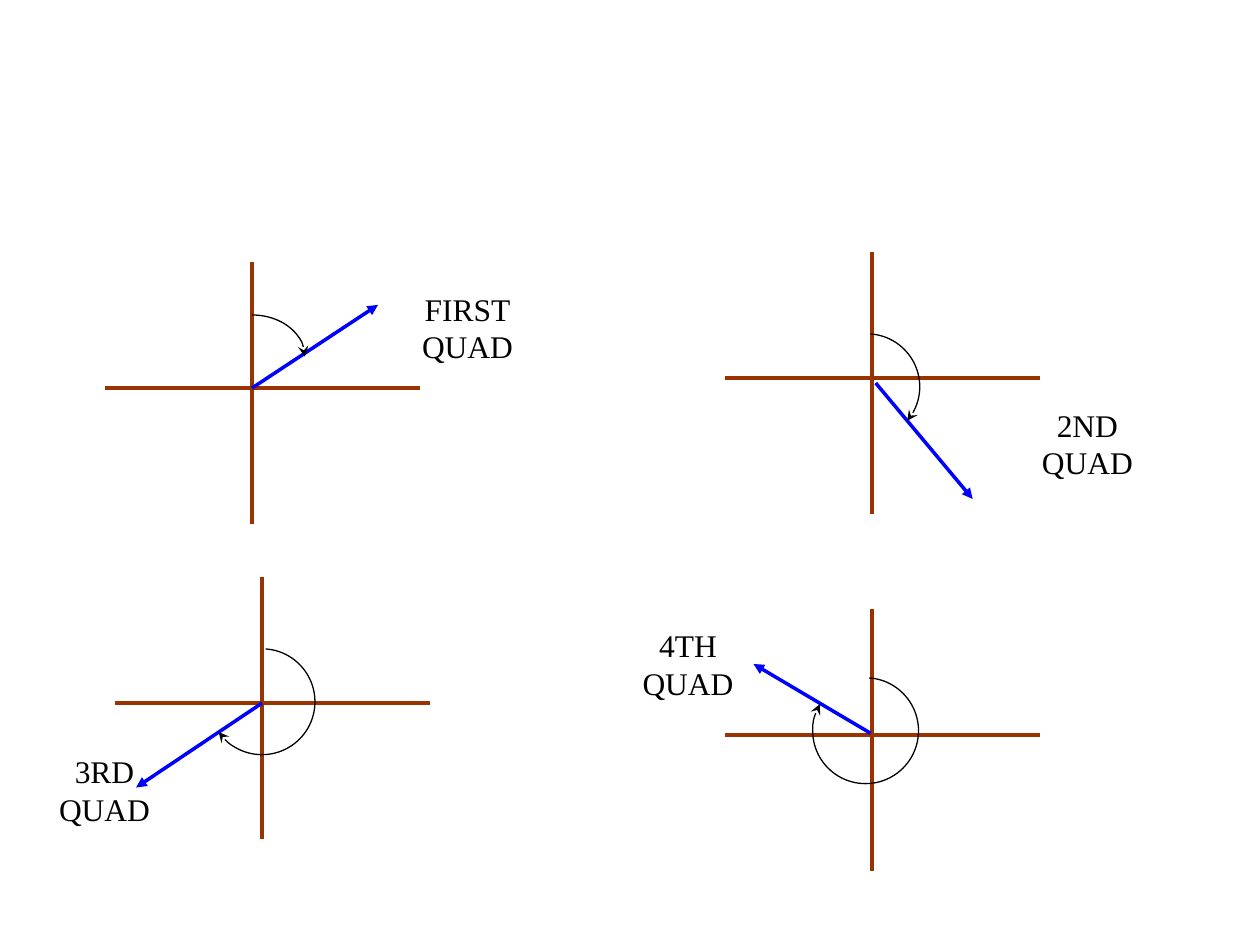
from pptx import Presentation
from pptx.dml.color import RGBColor
from pptx.enum import shapes as kinds, text as txt
from pptx.oxml import parse_xml
from pptx.oxml.ns import nsdecls
from pptx.util import Inches, Pt

BROWN = RGBColor(0x99, 0x33, 0x00)
BLUE = RGBColor(0x00, 0x00, 0xFF)
BLACK = RGBColor(0x00, 0x00, 0x00)

# origin, vector start, vector tip,
# arc (centre x, centre y, x radius, y radius, start and end degrees),
# label (rank, left, top, width, wrap)
QUADS = [
    ((2, 3.08), (2, 3.08), (3, 2.42),
     (2, 2.83, 0.42, 0.33, 270, 0), ("FIRST", 3.25, 2.25, 0.92, False)),
    ((6.92, 3), (6.95, 3.04), (7.72, 3.96),
     (6.88, 3.07, 0.42, 0.42, 274, 40), ("2ND", 8.17, 3.17, 0.92, False)),
    ((2.08, 5.58), (2.08, 5.58), (1.08, 6.25),
     (2.08, 5.57, 0.42, 0.42, 274, 145), ("3RD", 0.33, 5.92, 1, True)),
    ((6.92, 5.83), (6.91, 5.82), (5.98, 5.27),
     (6.87, 5.8, 0.42, 0.42, 274, 210), ("4TH", 5, 4.92, 0.92, False)),
]
LEFT, RIGHT, UP, DOWN = 1.17, 1.33, 1, 1.08  # axis reach from the origin

deck = Presentation()
deck.slide_width, deck.slide_height = Inches(10), Inches(7.5)
slide = deck.slides.add_slide(deck.slide_layouts[6])


def add_tip(line, kind):
    """Put an arrowhead at the end of a line."""
    line._get_or_add_ln().append(
        parse_xml(f'<a:tailEnd {nsdecls("a")} type="{kind}"/>'))


def add_line(start, end, color, width):
    ends = [Inches(v) for v in (*start, *end)]
    rod = slide.shapes.add_connector(kinds.MSO_CONNECTOR.STRAIGHT, *ends)
    rod.line.color.rgb = color
    rod.line.width = Pt(width)
    rod._element.spPr.append(parse_xml(f'<a:effectLst {nsdecls("a")}/>'))
    return rod


for (x, y), start, tip, curve, label in QUADS:
    add_line((x - LEFT, y), (x + RIGHT, y), BROWN, 2.25)
    add_line((x, y - UP), (x, y + DOWN), BROWN, 2.25)
    add_tip(add_line(start, tip, BLUE, 2).line, "triangle")

    cx, cy, rx, ry, first, last = curve
    arc = slide.shapes.add_shape(
        kinds.MSO_SHAPE.ARC, Inches(cx - rx), Inches(cy - ry),
        Inches(2 * rx), Inches(2 * ry))
    # Angles are stored in 60000ths of a degree, adjustments in 100000ths
    arc.adjustments[0] = first * 0.6
    arc.adjustments[1] = last * 0.6
    arc.shadow.inherit = False
    arc.fill.background()
    arc.line.color.rgb = BLACK
    arc.line.width = Pt(0.75)
    add_tip(arc.line, "stealth")

    rank, left, top, width, wrap = label
    box = slide.shapes.add_textbox(
        Inches(left), Inches(top), Inches(width), Inches(0.7))
    frame = box.text_frame
    frame.word_wrap = wrap
    frame.auto_size = txt.MSO_AUTO_SIZE.SHAPE_TO_FIT_TEXT
    for i, word in enumerate((rank, "QUAD")):
        para = frame.add_paragraph() if i else frame.paragraphs[0]
        para.alignment = txt.PP_ALIGN.CENTER
        run = para.add_run()
        run.text = word
        run.font.name = "Times New Roman"
        run.font.size = Pt(18)
        run.font.color.rgb = BLACK

deck.save("out.pptx")
